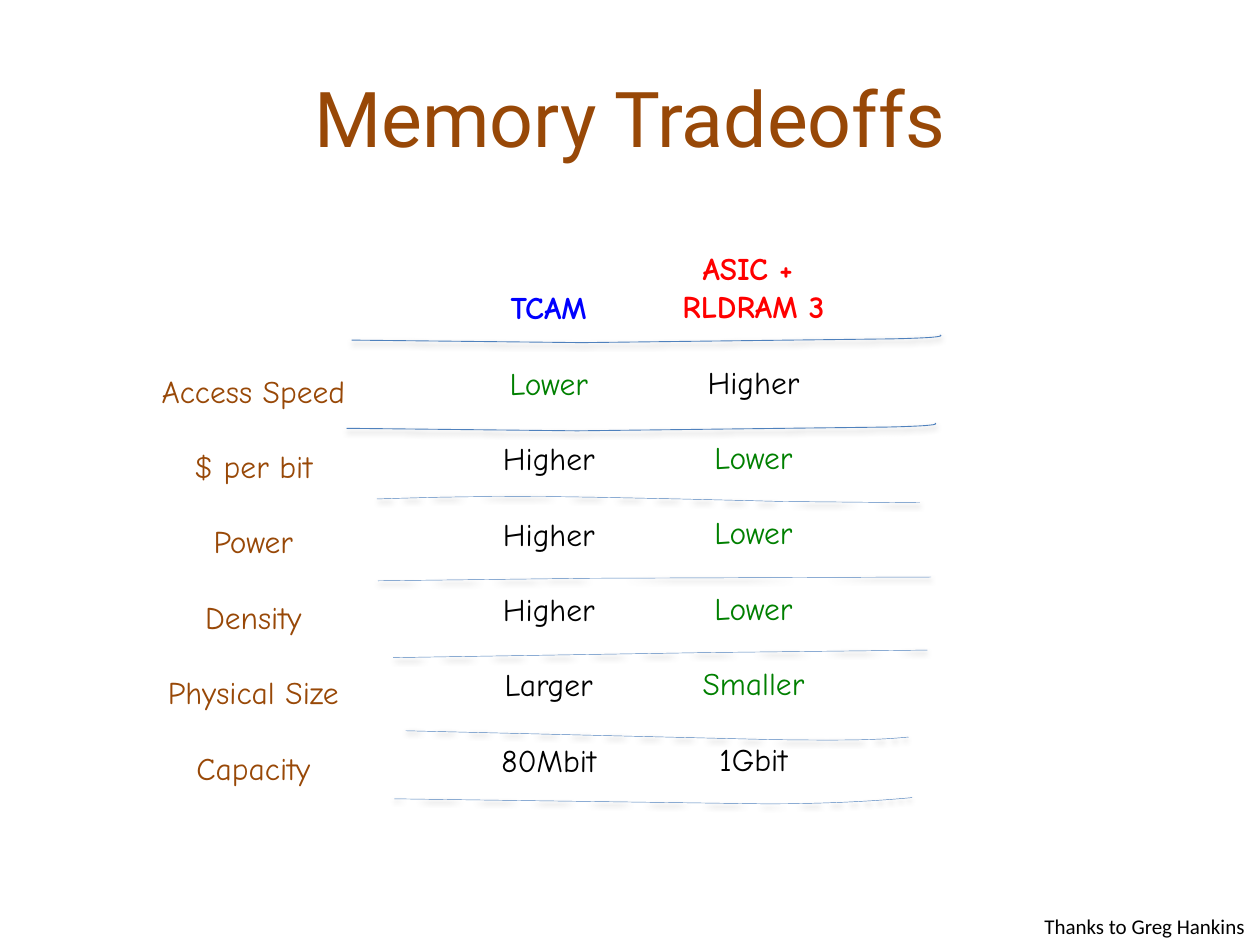
from dataclasses import dataclass

from lxml.etree import SubElement
from pptx import Presentation
from pptx.dml.color import RGBColor
from pptx.enum.text import MSO_ANCHOR, PP_ALIGN
from pptx.oxml.ns import qn
from pptx.util import Inches, Pt


@dataclass(frozen=True)
class Theme:
    """Colours, fonts and type sizes of the slide."""
    brown: str = "984807"
    blue: str = "0000FF"
    red: str = "FF0000"
    green: str = "008000"
    black: str = "000000"
    rule: str = "4F81BD"
    title_font: str = "Roboto"
    hand_font: str = "Comic Neue"
    note_font: str = "Calibri"
    title_size: float = 44
    body_size: float = 18
    note_size: float = 12
    row_gap: float = 21.5


THEME = Theme()

LABELS = ["Access Speed", "$ per bit", "Power", "Density", "Physical Size", "Capacity"]
TCAM = ["Lower", "Higher", "Higher", "Higher", "Larger", "80Mbit"]
RLDRAM = ["Higher", "Lower", "Lower", "Lower", "Smaller", "1Gbit"]

HEADER_RULE = [(2.79, 2.7), (4.62, 2.72), (7.08, 2.69),
               ((7.56, 2.68), (7.46, 2.66), (7.46, 2.66))]
SPEED_RULE = [(2.75, 3.4), (4.58, 3.42), (7.04, 3.39),
              ((7.51, 3.38), (7.42, 3.36), (7.42, 3.36))]
THIN_RULES = [
    [(2.99, 3.96), ((3.31, 3.95), (3.63, 3.94), (4.17, 3.94)),
     ((4.7, 3.94), (6.21, 3.98), (6.21, 3.98)), (7.3, 3.99)],
    [(3, 4.61), (4.69, 4.59), (7.39, 4.58)],
    [(3.12, 5.22), (5.61, 5.18), (7.36, 5.16)],
    [(3.22, 5.8), (6.12, 5.87), ((6.79, 5.88), (7, 5.87), (7.21, 5.85))],
    [(3.13, 6.34), (6.09, 6.38), ((6.78, 6.38), (7.24, 6.33), (7.24, 6.33))],
]


def add_text(tf, text, *, font, size, color, bold=False, align=PP_ALIGN.CENTER,
             before=0, first=False):
    """Write one formatted paragraph into a text frame."""
    p = tf.paragraphs[0] if first else tf.add_paragraph()
    p.alignment = align
    p.space_before = Pt(before)
    r = p.add_run()
    r.text = text
    r.font.name = font
    r.font.size = Pt(size)
    r.font.bold = bold
    r.font.color.rgb = RGBColor.from_string(color)


def add_box(s, left, top, width, height, *, wrap=False, anchor=MSO_ANCHOR.TOP):
    """Add a text box and return its text frame."""
    sp = s.shapes.add_textbox(Inches(left), Inches(top), Inches(width), Inches(height))
    tf = sp.text_frame
    tf.word_wrap = wrap
    tf.vertical_anchor = anchor
    return tf


def add_column(s, box, values, *, heads=(), head_color=None, colors):
    """Add one column of the comparison with optional bold heading lines."""
    tf = add_box(s, *box)
    style = dict(font=THEME.hand_font, size=THEME.body_size)
    for i, head in enumerate(heads):
        add_text(tf, head, color=head_color, bold=True, first=i == 0, **style)
    for i, value in enumerate(values):
        first = i == 0 and not heads
        add_text(tf, value, color=colors.get(value, colors["default"]),
                 before=0 if first else THEME.row_gap, first=first, **style)


def curve(start, c1, c2, end, steps=12):
    """Return points along a cubic Bezier curve."""
    return [tuple((1 - t) ** 3 * a + 3 * (1 - t) ** 2 * t * b
                  + 3 * (1 - t) * t ** 2 * c + t ** 3 * d
                  for a, b, c, d in zip(start, c1, c2, end))
            for t in (k / steps for k in range(1, steps + 1))]


def add_shadow(sp):
    """Give a shape a soft shadow below it."""
    sp.shadow.inherit = False
    effects = sp._element.spPr.find(qn("a:effectLst"))
    shadow = SubElement(effects, qn("a:outerShdw"), blurRad=str(Pt(3.1)),
                        dist=str(Pt(1.6)), dir="5400000", rotWithShape="0")
    color = SubElement(shadow, qn("a:srgbClr"), val=THEME.black)
    SubElement(color, qn("a:alpha"), val="38000")


def add_rule(s, segments, weight):
    """Draw one hand-drawn rule from straight and curved segments."""
    points = [segments[0]]
    for segment in segments[1:]:
        is_curve = isinstance(segment[0], tuple)
        points += curve(points[-1], *segment) if is_curve else [segment]
    start, *rest = [(Inches(x), Inches(y)) for x, y in points]
    builder = s.shapes.build_freeform(*start)
    builder.add_line_segments(rest, close=False)
    sp = builder.convert_to_shape()
    sp.fill.background()
    sp.line.color.rgb = RGBColor.from_string(THEME.rule)
    sp.line.width = Pt(weight)
    add_shadow(sp)


def main():
    """Build and save the slide."""
    prs = Presentation()
    prs.slide_width, prs.slide_height = Inches(10), Inches(7.5)
    s = prs.slides.add_slide(prs.slide_layouts[6])

    title = add_box(s, 0.5, 0.3, 9, 1.25, wrap=True, anchor=MSO_ANCHOR.MIDDLE)
    add_text(title, "Memory Tradeoffs", font=THEME.title_font,
             size=THEME.title_size, color=THEME.brown, first=True)

    better = {"Lower": THEME.green, "Smaller": THEME.green, "default": THEME.black}
    add_column(s, (3.81, 2.24, 1.09, 4.34), TCAM, heads=["TCAM"],
               head_color=THEME.blue, colors=better)
    add_column(s, (5.13, 1.93, 1.7, 4.64), RLDRAM, heads=["ASIC + ", "RLDRAM 3"],
               head_color=THEME.red, colors=better)
    add_column(s, (1.05, 2.9, 1.92, 3.43), LABELS, colors={"default": THEME.brown})

    note = add_box(s, 8.19, 7.2, 1.81, 0.3)
    add_text(note, "Thanks to Greg Hankins", font=THEME.note_font,
             size=THEME.note_size, color=THEME.black, align=PP_ALIGN.LEFT, first=True)

    for rule in (HEADER_RULE, SPEED_RULE):
        add_rule(s, rule, 0.5)
    for rule in THIN_RULES:
        add_rule(s, rule, 0.25)

    prs.save("out.pptx")


if __name__ == "__main__":
    main()
